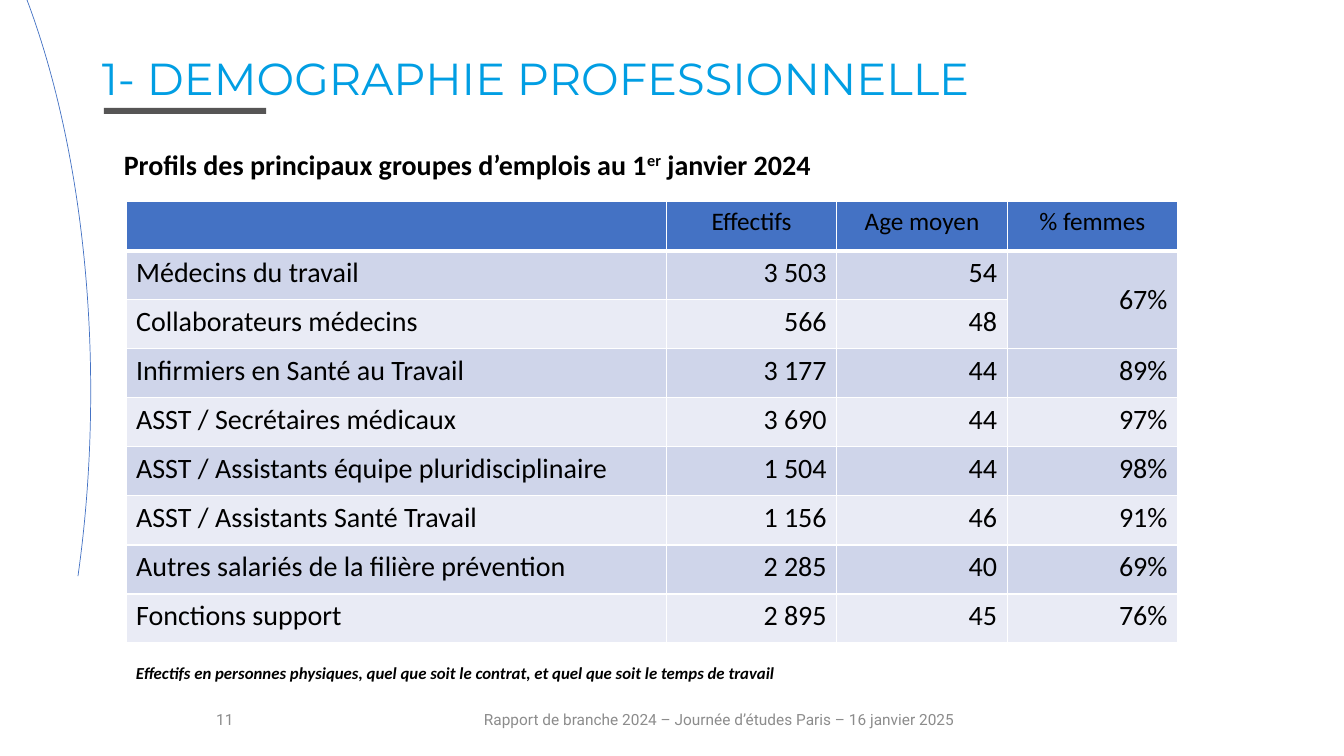
from lxml import etree
from pptx import Presentation
from pptx.dml.color import RGBColor
from pptx.enum.shapes import MSO_SHAPE
from pptx.enum.text import MSO_ANCHOR, MSO_AUTO_SIZE, PP_ALIGN
from pptx.oxml.ns import qn
from pptx.util import Inches, Pt

BLACK = RGBColor(0x00, 0x00, 0x00)
WHITE = RGBColor(0xFF, 0xFF, 0xFF)
BLUE = RGBColor(0x44, 0x72, 0xC4)
CYAN = RGBColor(0x01, 0x9E, 0xE3)
DARK_GREY = RGBColor(0x56, 0x55, 0x55)
GREY = RGBColor(0x8C, 0x8C, 0x8C)
BAND_DARK = RGBColor(0xCF, 0xD5, 0xEA)
BAND_LIGHT = RGBColor(0xE9, 0xEB, 0xF5)


def style_runs(p, size, color, font="Calibri", bold=False, italic=False):
    for r in p.runs:
        r.font.size, r.font.name = Pt(size), font
        r.font.bold, r.font.italic = bold, italic
        r.font.color.rgb = color


def add_text(box, parts):
    """Add a wrapping text box with one run per part; return its paragraph."""
    tf = slide.shapes.add_textbox(*map(Inches, box)).text_frame
    tf.word_wrap = True
    p = tf.paragraphs[0]
    for part in parts:
        p.add_run().text = part
    return p


prs = Presentation()
prs.slide_width, prs.slide_height = Inches(13.33), Inches(7.5)
slide = prs.slides.add_slide(prs.slide_layouts[5])

# Decoration
bar = slide.shapes.add_shape(MSO_SHAPE.RECTANGLE, Inches(1.03), Inches(1.07), Inches(1.61), Inches(0.06))
bar.shadow.inherit = False
bar.fill.solid()
bar.fill.fore_color.rgb = DARK_GREY
bar.line.fill.background()

arc = slide.shapes.add_shape(MSO_SHAPE.ARC, Inches(-4.42), Inches(-2.12), Inches(5.32), Inches(12.01))
arc.shadow.inherit = False
for i, degrees in enumerate((178.34, 35.86)):
    arc.adjustments[i] = degrees * 60000 / 100000
arc.fill.background()
arc.line.color.rgb = BLUE
arc.line.width = Pt(0.5)

# Title
title = slide.shapes.title
title.left, title.top, title.width, title.height = map(Inches, (0.91, 0.51, 10.78, 0.6))
tf = title.text_frame
tf.text = "1- DEMOGRAPHIE PROFESSIONNELLE"
tf.auto_size = MSO_AUTO_SIZE.NONE
tf.vertical_anchor = MSO_ANCHOR.TOP
p = tf.paragraphs[0]
p.alignment = PP_ALIGN.LEFT
p.line_spacing = 0.9
p.space_before = Pt(10)
style_runs(p, 32, CYAN, "Montserrat")

# Subtitle and note
p = add_text((1.13, 1.41, 11.33, 0.6),
             ["Profils des principaux groupes d’emplois au 1", "er", " janvier 2024"])
style_runs(p, 20, BLACK, bold=True)
p.runs[1].font._element.set("baseline", "30000")

p = add_text((1.25, 6.53, 7.75, 0.3),
             ["Effectifs en personnes physiques, quel que soit le contrat, et quel que soit le temps de travail"])
style_runs(p, 12, BLACK, bold=True, italic=True)

# Footer
for left, width, text in (
    (0.73, 3, "11"),
    (4.31, 5.65, "Rapport de branche 2024 – Journée d’études Paris – 16 janvier 2025"),
):
    p = add_text((left, 6.94, width, 0.4), [text])
    p.alignment = PP_ALIGN.CENTER
    style_runs(p, 11, GREY, "Roboto")
    slide.shapes[-1].text_frame.vertical_anchor = MSO_ANCHOR.MIDDLE

# Table
rows = [
    ("", "Effectifs", "Age moyen", "% femmes"),
    ("Médecins du travail", "3 503", "54", "67%"),
    ("Collaborateurs médecins", "566", "48", ""),
    ("Infirmiers en Santé au Travail", "3 177", "44", "89%"),
    ("ASST / Secrétaires médicaux", "3 690", "44", "97%"),
    ("ASST / Assistants équipe pluridisciplinaire", "1 504", "44", "98%"),
    ("ASST / Assistants Santé Travail", "1 156", "46", "91%"),
    ("Autres salariés de la filière prévention", "2 285", "40", "69%"),
    ("Fonctions support", "2 895", "45", "76%"),
]
table = slide.shapes.add_table(len(rows), 4, Inches(1.25), Inches(2), Inches(10.44), Inches(4.38)).table
for column, width in zip(table.columns, (5.36, 1.69, 1.69, 1.69)):
    column.width = Inches(width)

for i, row in enumerate(rows):
    for j, text in enumerate(row):
        cell = table.cell(i, j)
        cell.text = text
        p = cell.text_frame.paragraphs[0]
        if i == 0:
            fill, size, p.alignment = BLUE, 18, PP_ALIGN.CENTER
        else:
            fill, size = (BAND_DARK if i % 2 else BAND_LIGHT), 20
            p.alignment = PP_ALIGN.RIGHT if j else PP_ALIGN.LEFT
        style_runs(p, size, BLACK)

        tc_pr = cell._tc.get_or_add_tcPr()
        for side in ("lnL", "lnR", "lnT", "lnB"):
            under_header = (i, side) in ((0, "lnB"), (1, "lnT"))
            ln = etree.SubElement(tc_pr, qn(f"a:{side}"), w=str(Pt(3 if under_header else 1)))
            line_fill = etree.SubElement(ln, qn("a:solidFill"))
            etree.SubElement(line_fill, qn("a:srgbClr"), val=str(WHITE))
        cell.fill.solid()
        cell.fill.fore_color.rgb = fill

women_doctors = table.cell(1, 3)
women_doctors.merge(table.cell(2, 3))
women_doctors.vertical_anchor = MSO_ANCHOR.MIDDLE

prs.save("out.pptx")
